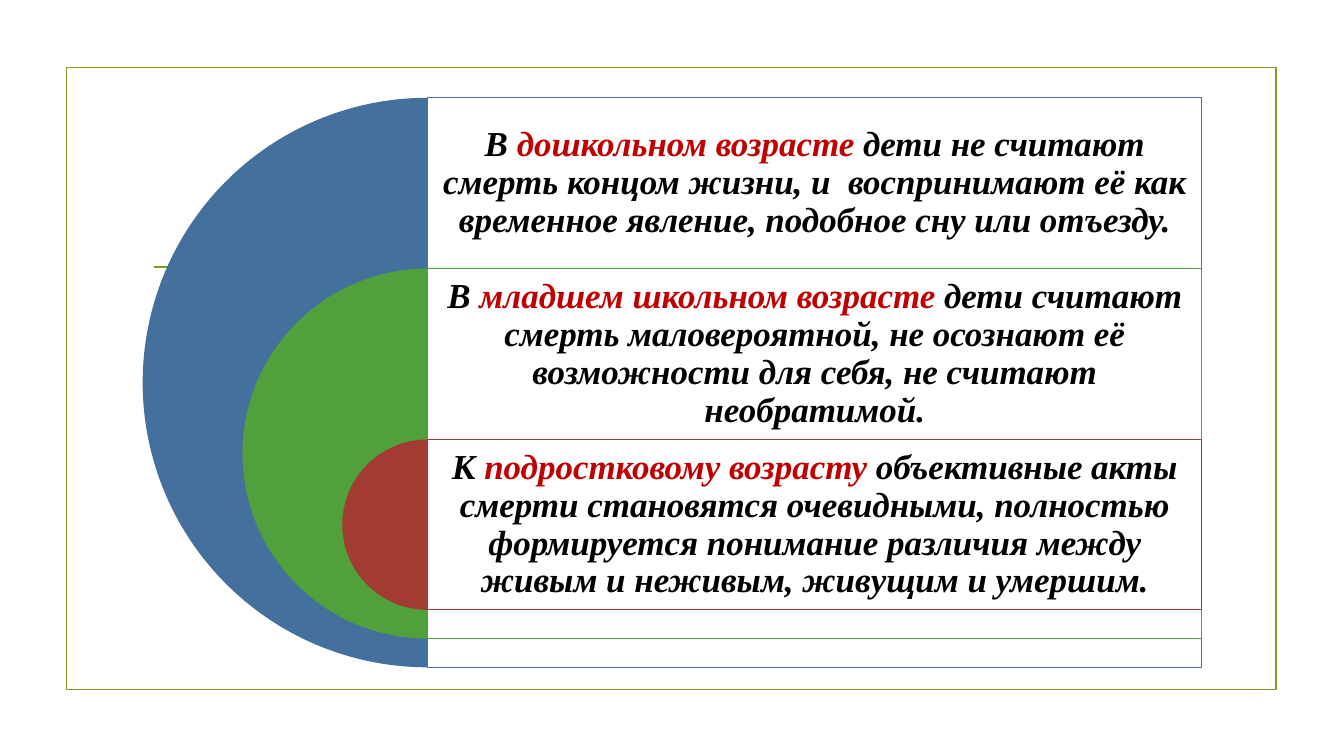
from dataclasses import dataclass

from lxml import etree
from pptx import Presentation
from pptx.dml.color import RGBColor
from pptx.enum.shapes import MSO_CONNECTOR, MSO_SHAPE
from pptx.enum.text import MSO_ANCHOR, PP_ALIGN
from pptx.oxml.ns import qn
from pptx.util import Inches, Pt

RECT, PIE = MSO_SHAPE.RECTANGLE, MSO_SHAPE.PIE
LINE = MSO_CONNECTOR.STRAIGHT
MIDDLE, CENTER = MSO_ANCHOR.MIDDLE, PP_ALIGN.CENTER


@dataclass(frozen=True)
class Theme:
    frame: str = "83992A"
    paper: str = "FFFFFF"
    ink: str = "000000"
    accent: str = "C00000"
    rings: tuple = ("44709D", "50A03B", "A23C33")
    face: str = "Times New Roman"
    size: float = 25
    thick: float = 1.25
    thin: float = 0.75
    alpha: int = 90


def color(code):
    return RGBColor.from_string(code)


def apply(target, values):
    for name, value in values.items():
        setattr(target, name, value)


class Board:
    def __init__(self, slide, theme):
        self.slide, self.theme = slide, theme

    def stroke(self, line, code, width):
        line.color.rgb = color(code)
        line.width = Pt(width)

    def shape(self, kind, box, fill=None, edge=None, width=1, alpha=100):
        item = self.slide.shapes.add_shape(kind, *map(Inches, box))
        item.shadow.inherit = False
        if fill:
            item.fill.solid()
            item.fill.fore_color.rgb = color(fill)
            if alpha < 100:
                tint = item.fill._xPr.find(".//" + qn("a:srgbClr"))
                etree.SubElement(tint, qn("a:alpha"), val=str(alpha * 1000))
        else:
            item.fill.background()
        if edge:
            self.stroke(item.line, edge, width)
        else:
            item.line.fill.background()
        return item

    def rule(self, left, right, top):
        ends = map(Inches, (left, top, right, top))
        item = self.slide.shapes.add_connector(LINE, *ends)
        self.stroke(item.line, self.theme.frame, self.theme.thick)
        etree.SubElement(item._element.spPr, qn("a:effectLst"))

    def half(self, mid, top, size, fill):
        item = self.shape(PIE, (mid - size / 2, top, size, size), fill)
        # Angles of 90 and 270 degrees leave the left half
        item.adjustments[0], item.adjustments[1] = 54, 162

    def text(self, box, parts):
        frame = self.slide.shapes.add_textbox(*map(Inches, box)).text_frame
        pad = Inches(0.1)
        apply(frame, {"word_wrap": True, "vertical_anchor": MIDDLE,
                      "margin_left": pad, "margin_right": pad,
                      "margin_top": pad, "margin_bottom": pad})
        para = frame.paragraphs[0]
        apply(para, {"alignment": CENTER, "line_spacing": 0.9})
        look = {"name": self.theme.face, "size": Pt(self.theme.size),
                "bold": True, "italic": True}
        for words, code in parts:
            run = para.add_run()
            run.text = words
            apply(run.font, look)
            run.font.color.rgb = color(code)


STAGES = (
    ("В ", "дошкольном возрасте ",
     "дети не считают смерть концом жизни, и  воспринимают её как "
     "временное явление, подобное сну или отъезду."),
    ("В ", "младшем школьном возрасте ",
     "дети считают смерть маловероятной, не осознают её возможности "
     "для себя, не считают необратимой."),
    ("К ", "подростковому возрасту ",
     "объективные акты смерти становятся очевидными, полностью "
     "формируется понимание различия между живым и неживым, "
     "живущим и умершим."),
)


def main():
    deck = Presentation()
    deck.slide_width, deck.slide_height = Inches(13.33), Inches(7.5)
    theme = Theme()
    board = Board(deck.slides.add_slide(deck.slide_layouts[6]), theme)

    # Frame and rule behind the diagram
    board.shape(RECT, (0.66, 0.67, 12, 6.17), None, theme.frame, theme.thick)
    board.rule(1.53, 11.81, 2.65)

    # Nested half circles, each with its panel and text
    mid, first, wide, row = 4.24, 0.97, 7.68, 1.695
    large, shrink = 5.65, 1.98
    for i, (lead, age, rest) in enumerate(STAGES):
        top, size, tone = first + i * row, large - i * shrink, theme.rings[i]
        board.half(mid, top, size, tone)
        board.shape(RECT, (mid, top, wide, size), theme.paper, tone,
                    theme.thin, theme.alpha)
        board.text((mid, top, wide, row), ((lead, theme.ink),
                                           (age, theme.accent),
                                           (rest, theme.ink)))

    deck.save("out.pptx")


if __name__ == "__main__":
    main()
